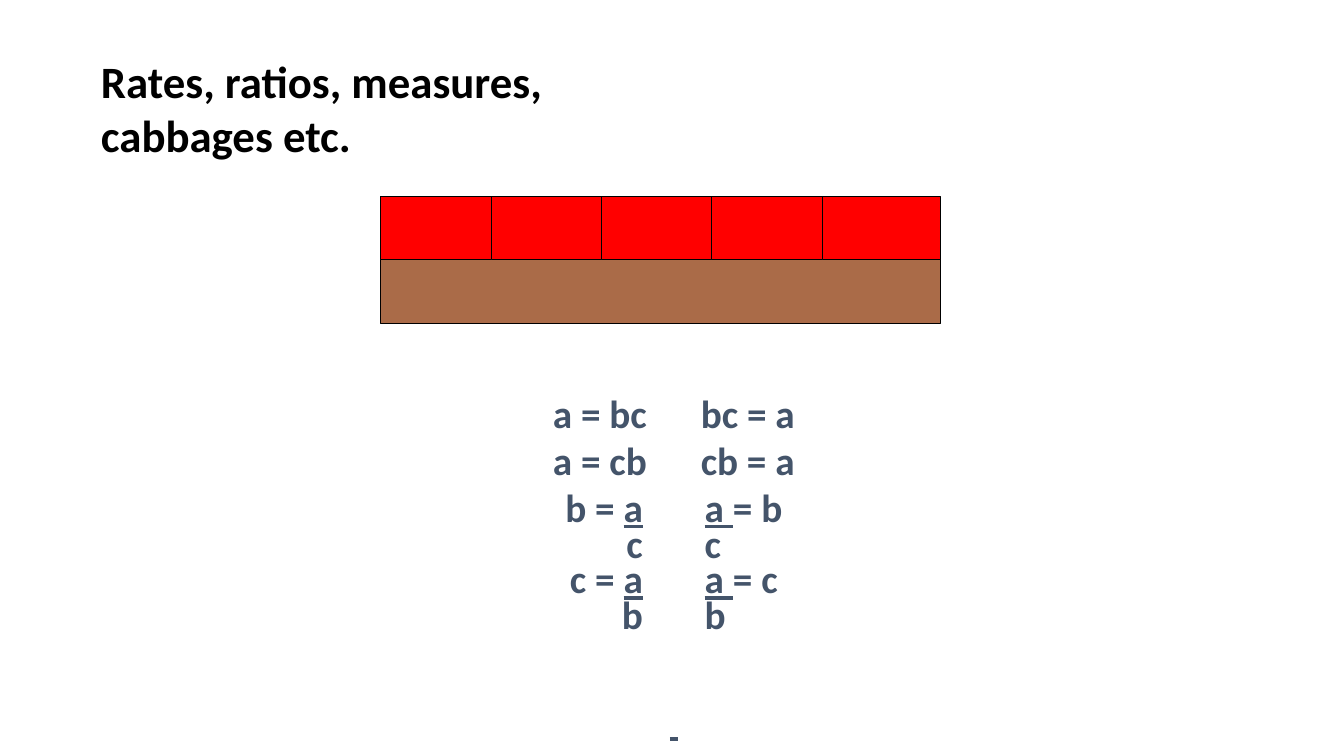
from pptx import Presentation
from pptx.dml.color import RGBColor
from pptx.enum.shapes import MSO_CONNECTOR as Connector, MSO_SHAPE as Shape
from pptx.enum.text import MSO_ANCHOR as Anchor, MSO_AUTO_SIZE as AutoSize, PP_ALIGN as Align
from pptx.oxml.ns import qn
from pptx.util import Cm, Pt

BLACK = RGBColor(0x00, 0x00, 0x00)
RED = RGBColor(0xFF, 0x00, 0x00)
BROWN = RGBColor(0xAA, 0x6B, 0x48)
SLATE = RGBColor(0x44, 0x54, 0x6A)

TITLE_FONT = {"name": "Calibri", "size": Pt(32), "bold": True}
EQUATION_FONT = {"name": "Calibri", "size": Pt(28), "bold": True}

# Each equation line is a list of (text, underlined) spans
LEFT_LINES = [
    [("a = bc", False)],
    [("a = cb", False)],
    [("b = ", False), ("a", True)],
    [("c", False)],
    [("c = ", False), ("a", True)],
    [("b", False)],
]
RIGHT_LINES = [
    [("bc = a", False)],
    [("cb = a", False)],
    [("a ", True), ("= b", False)],
    [("c", False)],
    [("a ", True), ("= c", False)],
    [("b", False)],
]
FRACTION_START = 2  # first line that belongs to a fraction
TIGHT_START = 3     # first line with reduced spacing


def set_all(target, values):
    for name, value in values.items():
        setattr(target, name, value)


def place(shape, left, top, width, height):
    set_all(shape, {"left": Cm(left), "top": Cm(top),
                    "width": Cm(width), "height": Cm(height)})


def add_span(para, text, font, color):
    span = para.add_run()
    span.text = text
    set_all(span.font, font)
    span.font.color.rgb = color
    return span


def fill_title(title, left, top, width, height):
    place(title, left, top, width, height)
    set_all(title.text_frame, {"auto_size": AutoSize.NONE, "word_wrap": True,
                               "vertical_anchor": Anchor.TOP})
    para = title.text_frame.paragraphs[0]
    para.alignment = Align.LEFT
    add_span(para, "Rates, ratios, measures, cabbages etc.", TITLE_FONT, BLACK)


def add_bar(slide, color, left, top, width, height):
    bar = slide.shapes.add_shape(Shape.RECTANGLE, Cm(left), Cm(top), Cm(width), Cm(height))
    bar.shadow.inherit = False
    bar.fill.solid()
    bar.fill.fore_color.rgb = color
    bar.line.color.rgb = BLACK
    bar.line.width = Pt(0.75)


def add_rods(slide, left, top, width, height, step=2.78, count=5):
    row = height / 2
    add_bar(slide, BROWN, left, top + row, width, row)
    # The last red rod takes up what is left of the width
    for index in range(count):
        offset = index * step
        rod_width = step if index < count - 1 else width - offset
        add_bar(slide, RED, left + offset, top, rod_width, row)


def fill_equations(body, lines, alignment, margin, left, top, width, height):
    place(body, left, top, width, height)
    frame = body.text_frame
    set_all(frame, {"auto_size": AutoSize.NONE, "word_wrap": True,
                    "vertical_anchor": Anchor.TOP, "margin_left": 0, "margin_right": 0})
    for index, spans in enumerate(lines):
        para = frame.paragraphs[0] if index == 0 else frame.add_paragraph()
        set_all(para, {"alignment": alignment, "space_before": Pt(0), "space_after": Pt(0),
                       "line_spacing": 0.75 if index >= TIGHT_START else 1.0})
        # No bullet; fractions sit slightly further from the middle
        properties = para._p.get_or_add_pPr()
        properties.set("marL", "0")
        properties.set("indent", "0")
        if index >= FRACTION_START:
            properties.set(margin, str(Cm(0.1)))
        properties.append(properties.makeelement(qn("a:buNone"), {}))
        for text, underlined in spans:
            add_span(para, text, EQUATION_FONT, SLATE).font.underline = underlined


def add_dash(slide, left, top, width):
    dash = slide.shapes.add_connector(Connector.STRAIGHT, Cm(left), Cm(top),
                                      Cm(left + width), Cm(top))
    dash.line.color.rgb = SLATE
    dash.line.width = Pt(3)
    properties = dash._element.spPr
    properties.append(properties.makeelement(qn("a:effectLst"), {}))


def build_ratio_slide(deck):
    slide = deck.slides.add_slide(deck.slide_layouts.get_by_name("Two Content"))
    title, left_body, right_body = list(slide.placeholders)[:3]

    # Heading
    fill_title(title, 2.29, 1.22, 14.1, 3)

    # Five red rods above one brown rod
    add_rods(slide, 9.6, 4.95, 14.1, 3.2)

    # Equations, mirrored about the middle
    middle, half_gap, width = 16.98, 0.68, 5.6
    fill_equations(left_body, LEFT_LINES, Align.RIGHT, "marR",
                   middle - half_gap - width, 9.68, width, 7)
    fill_equations(right_body, RIGHT_LINES, Align.LEFT, "marL",
                   middle + half_gap, 9.68, width, 7)

    # Short dash at the foot
    add_dash(slide, 16.88, 18.62, 0.2)


def main():
    deck = Presentation()
    deck.slide_width, deck.slide_height = Cm(33.87), Cm(19.05)
    build_ratio_slide(deck)
    deck.save("out.pptx")


if __name__ == "__main__":
    main()
